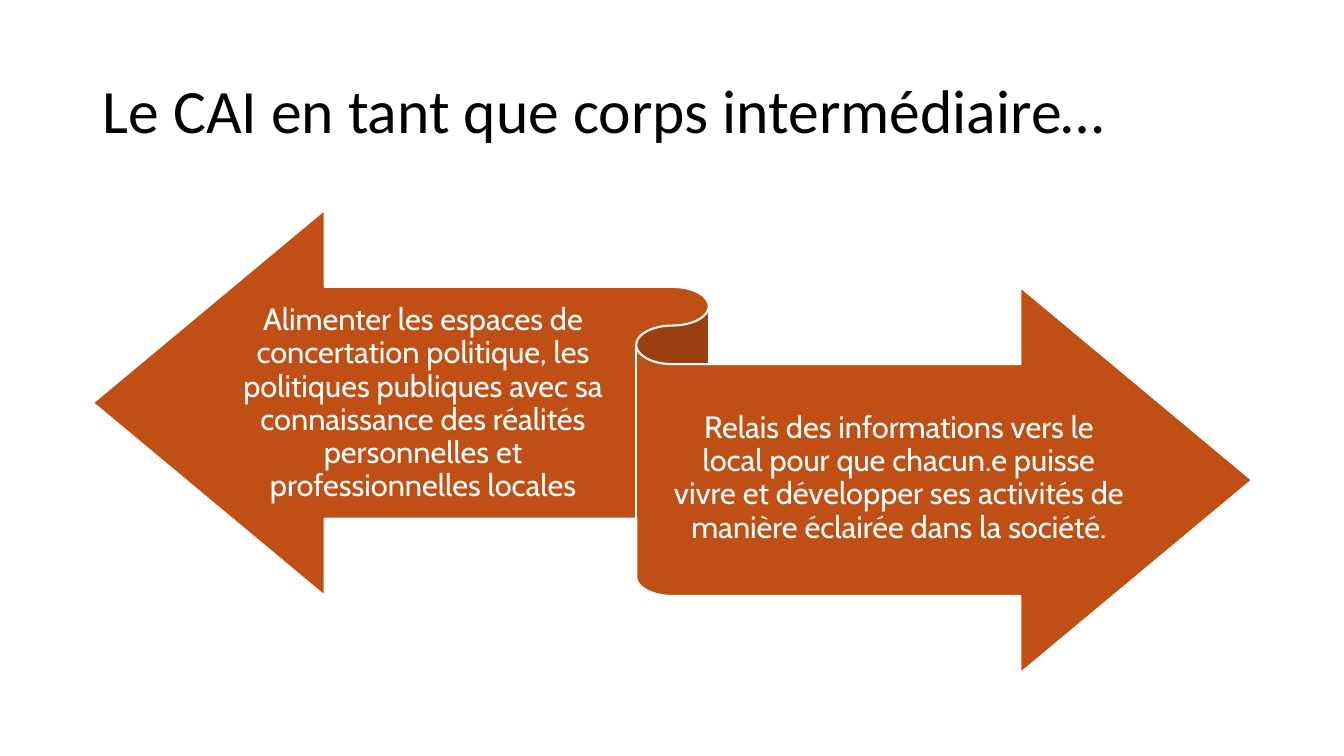
from pptx import Presentation
from pptx.dml.color import RGBColor
from pptx.enum.shapes import MSO_SHAPE
from pptx.enum.text import MSO_ANCHOR, PP_ALIGN
from pptx.util import Inches, Pt

RIBBON = MSO_SHAPE.LEFT_RIGHT_RIBBON
MIDDLE = MSO_ANCHOR.MIDDLE
LEFT, CENTER = PP_ALIGN.LEFT, PP_ALIGN.CENTER

TITLE_ONLY = 5
ORANGE, WHITE, BLACK = "C04F15", "FFFFFF", "000000"

TITLE = "Le CAI en tant que corps intermédiaire…"
FEEDBACK = ("Alimenter les espaces de concertation politique, les politiques "
            "publiques avec sa connaissance des réalités personnelles et "
            "professionnelles locales")
RELAY = ("Relais des informations vers le local pour que chacun.e puisse vivre "
         "et développer ses activités de manière éclairée dans la société.")


def rgb(value):
    return RGBColor.from_string(value)


def place(sp, x, y, w, h):
    sp.left, sp.top, sp.width, sp.height = (Inches(v) for v in (x, y, w, h))


def write(sp, text, size, font, color, align=LEFT, inset_x=0.1, inset_y=0.05):
    tf = sp.text_frame
    tf.word_wrap = True
    tf.vertical_anchor = MIDDLE
    tf.margin_left = tf.margin_right = Inches(inset_x)
    tf.margin_top = tf.margin_bottom = Inches(inset_y)
    p = tf.paragraphs[0]
    p.alignment = align
    p.line_spacing = 0.9
    p.space_before = Pt(0)
    r = p.add_run()
    r.text = text
    r.font.size = Pt(size)
    r.font.name = font
    r.font.color.rgb = rgb(color)


def add_title(s, x, y, w, h):
    sp = s.shapes.title
    place(sp, x, y, w, h)
    write(sp, TITLE, 44, "Calibri", BLACK)


def add_ribbon(s, x, y, w, h):
    """Two-way ribbon with one message on each arrow."""
    group = s.shapes.add_group_shape()
    ribbon = group.shapes.add_shape(
        RIBBON, Inches(x), Inches(y), Inches(w), Inches(h))
    ribbon.shadow.inherit = False
    ribbon.fill.solid()
    ribbon.fill.fore_color.rgb = rgb(ORANGE)
    ribbon.line.color.rgb = rgb(WHITE)
    ribbon.line.width = Pt(1.5)

    messages = [(FEEDBACK, 1.38, 0.8, 3.79), (RELAY, 5.75, 1.54, 4.49)]
    for text, dx, dy, width in messages:
        sp = group.shapes.add_textbox(
            Inches(x + dx), Inches(y + dy), Inches(width), Inches(2.25))
        write(sp, text, 22, "Cabin", WHITE, CENTER, inset_x=0, inset_y=0.09)


def main():
    prs = Presentation()
    prs.slide_width, prs.slide_height = Inches(13.33), Inches(7.5)
    s = prs.slides.add_slide(prs.slide_layouts[TITLE_ONLY])
    add_title(s, 0.92, 0.4, 11.5, 1.45)
    add_ribbon(s, 0.92, 2.08, 11.5, 4.6)
    prs.save("out.pptx")


if __name__ == "__main__":
    main()
